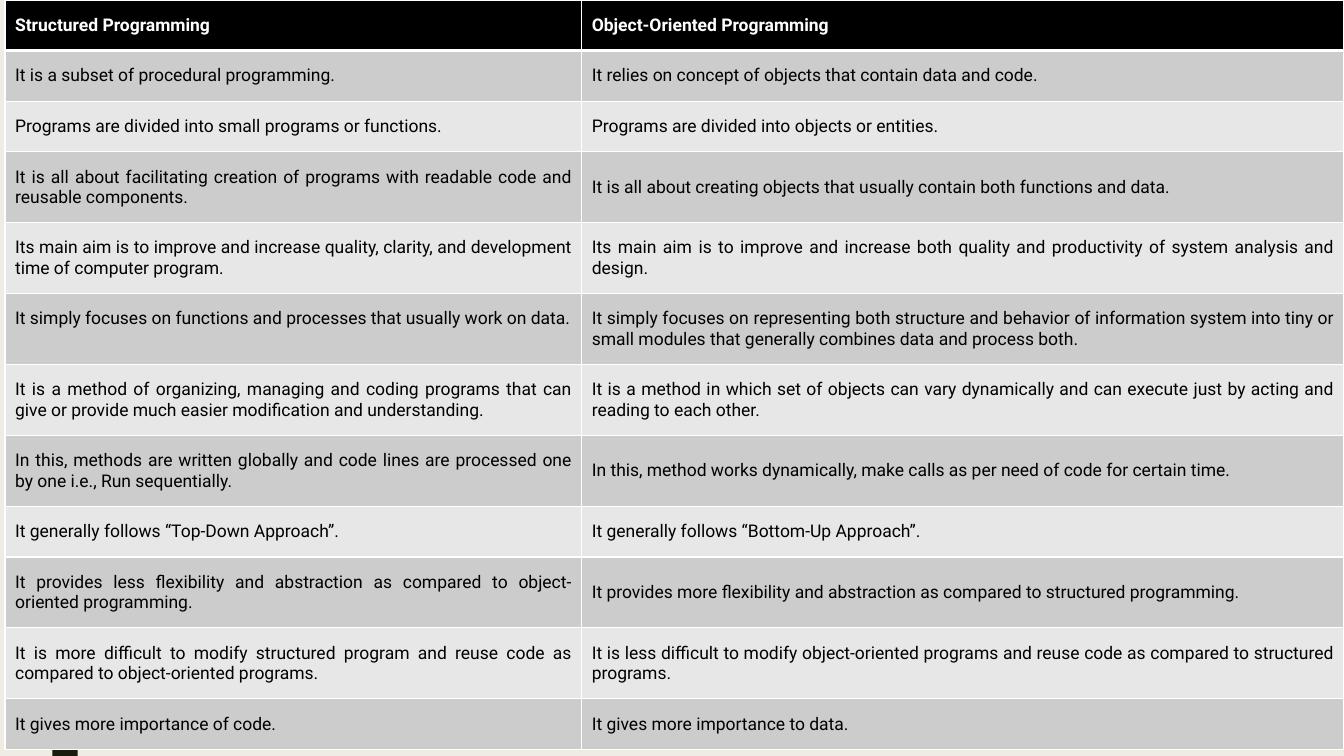
from dataclasses import dataclass

from lxml import etree
from pptx import Presentation
from pptx import util as u
from pptx.dml.color import RGBColor
from pptx.enum import shapes, text
from pptx.oxml.ns import qn


@dataclass(frozen=True)
class Theme:
    font: str = "Roboto"
    size: float = 12.5
    background: str = "EFEDE3"
    stripe: str = "191B0E"
    header: str = "000000"
    header_text: str = "FFFFFF"
    body_text: str = "000000"
    bands: tuple[str, str] = ("CCCCCC", "E7E7E7")
    border: str = "FFFFFF"
    thin: float = 1
    thick: float = 3


@dataclass(frozen=True)
class Contrast:
    structured: str
    object_oriented: str
    height: float = 0.5
    structured_anchor: text.MSO_ANCHOR = text.MSO_ANCHOR.MIDDLE


THEME = Theme()
TWO_LINES = 0.7
COLUMN_WIDTHS = (5.72, 7.56)

CONTRASTS = [
    Contrast("Structured Programming", "Object-Oriented Programming"),
    Contrast("It is a subset of procedural programming.",
             "It relies on concept of objects that contain data and code."),
    Contrast("Programs are divided into small programs or functions.",
             "Programs are divided into objects or entities."),
    Contrast("It is all about facilitating creation of programs with readable code and "
             "reusable components.",
             "It is all about creating objects that usually contain both functions and data.",
             TWO_LINES),
    Contrast("Its main aim is to improve and increase quality, clarity, and development "
             "time of computer program.",
             "Its main aim is to improve and increase both quality and productivity of "
             "system analysis and design.", TWO_LINES),
    Contrast("It simply focuses on functions and processes that usually work on data.",
             "It simply focuses on representing both structure and behavior of information "
             "system into tiny or small modules that generally combines data and process both.",
             TWO_LINES, text.MSO_ANCHOR.TOP),
    Contrast("It is a method of organizing, managing and coding programs that can give or "
             "provide much easier modification and understanding.",
             "It is a method in which set of objects can vary dynamically and can execute "
             "just by acting and reading to each other.", TWO_LINES),
    Contrast("In this, methods are written globally and code lines are processed one by one "
             "i.e., Run sequentially.",
             "In this, method works dynamically, make calls as per need of code for certain "
             "time.", TWO_LINES),
    Contrast("It generally follows “Top-Down Approach”.",
             "It generally follows “Bottom-Up Approach”."),
    Contrast("It provides less flexibility and abstraction as compared to object-oriented "
             "programming.",
             "It provides more flexibility and abstraction as compared to structured "
             "programming.", TWO_LINES),
    Contrast("It is more difficult to modify structured program and reuse code as compared "
             "to object-oriented programs.",
             "It is less difficult to modify object-oriented programs and reuse code as "
             "compared to structured programs.", TWO_LINES),
    Contrast("It gives more importance of code.", "It gives more importance to data."),
]


def rgb(value: str) -> RGBColor:
    return RGBColor.from_string(value)


def draw_borders(cell, row: int) -> None:
    """Outline a cell, with a thick rule between header and body."""
    widths = {
        "a:lnL": THEME.thin,
        "a:lnR": THEME.thin,
        "a:lnT": THEME.thick if row == 1 else THEME.thin,
        "a:lnB": THEME.thick if row == 0 else THEME.thin,
    }
    properties = cell._tc.get_or_add_tcPr()
    for side, width in widths.items():
        line = etree.SubElement(properties, qn(side), w=str(u.Pt(width)))
        fill = etree.SubElement(line, qn("a:solidFill"))
        etree.SubElement(fill, qn("a:srgbClr"), val=THEME.border)


def draw_cell(cell, wording: str, row: int, anchor: text.MSO_ANCHOR) -> None:
    is_header = row == 0
    draw_borders(cell, row)
    cell.fill.solid()
    cell.fill.fore_color.rgb = rgb(THEME.header if is_header else THEME.bands[(row - 1) % 2])
    cell.vertical_anchor = anchor
    cell.margin_left = cell.margin_right = u.Inches(0.1)
    cell.margin_top = cell.margin_bottom = u.Inches(0.15)

    cell.text = wording
    paragraph = cell.text_frame.paragraphs[0]
    paragraph.alignment = text.PP_ALIGN.JUSTIFY
    font = paragraph.font
    font.name = THEME.font
    font.size = u.Pt(THEME.size)
    font.bold = is_header
    font.color.rgb = rgb(THEME.header_text if is_header else THEME.body_text)


def draw_comparison(slide, contrasts: list[Contrast]) -> None:
    total_height = sum(contrast.height for contrast in contrasts)
    comparison = slide.shapes.add_table(
        len(contrasts), len(COLUMN_WIDTHS), u.Inches(0.05), 0,
        u.Inches(sum(COLUMN_WIDTHS)), u.Inches(total_height)).table
    comparison.horz_banding = False
    for column, width in zip(comparison.columns, COLUMN_WIDTHS):
        column.width = u.Inches(width)
    for row, contrast in enumerate(contrasts):
        comparison.rows[row].height = u.Inches(contrast.height)
        draw_cell(comparison.cell(row, 0), contrast.structured, row,
                  contrast.structured_anchor)
        draw_cell(comparison.cell(row, 1), contrast.object_oriented, row,
                  text.MSO_ANCHOR.MIDDLE)


def draw_stripe(slide, height: int) -> None:
    stripe = slide.shapes.add_shape(
        shapes.MSO_SHAPE.RECTANGLE, u.Inches(0.52), 0, u.Inches(0.25), height)
    stripe.shadow.inherit = False
    stripe.fill.solid()
    stripe.fill.fore_color.rgb = rgb(THEME.stripe)
    stripe.line.fill.background()


def main() -> None:
    deck = Presentation()
    deck.slide_width, deck.slide_height = u.Inches(13.33), u.Inches(7.5)
    slide = deck.slides.add_slide(deck.slide_layouts[6])

    # Background and vertical stripe
    slide.background.fill.solid()
    slide.background.fill.fore_color.rgb = rgb(THEME.background)
    draw_stripe(slide, deck.slide_height)

    # Comparison of the two paradigms
    draw_comparison(slide, CONTRASTS)
    deck.save("out.pptx")


if __name__ == "__main__":
    main()
